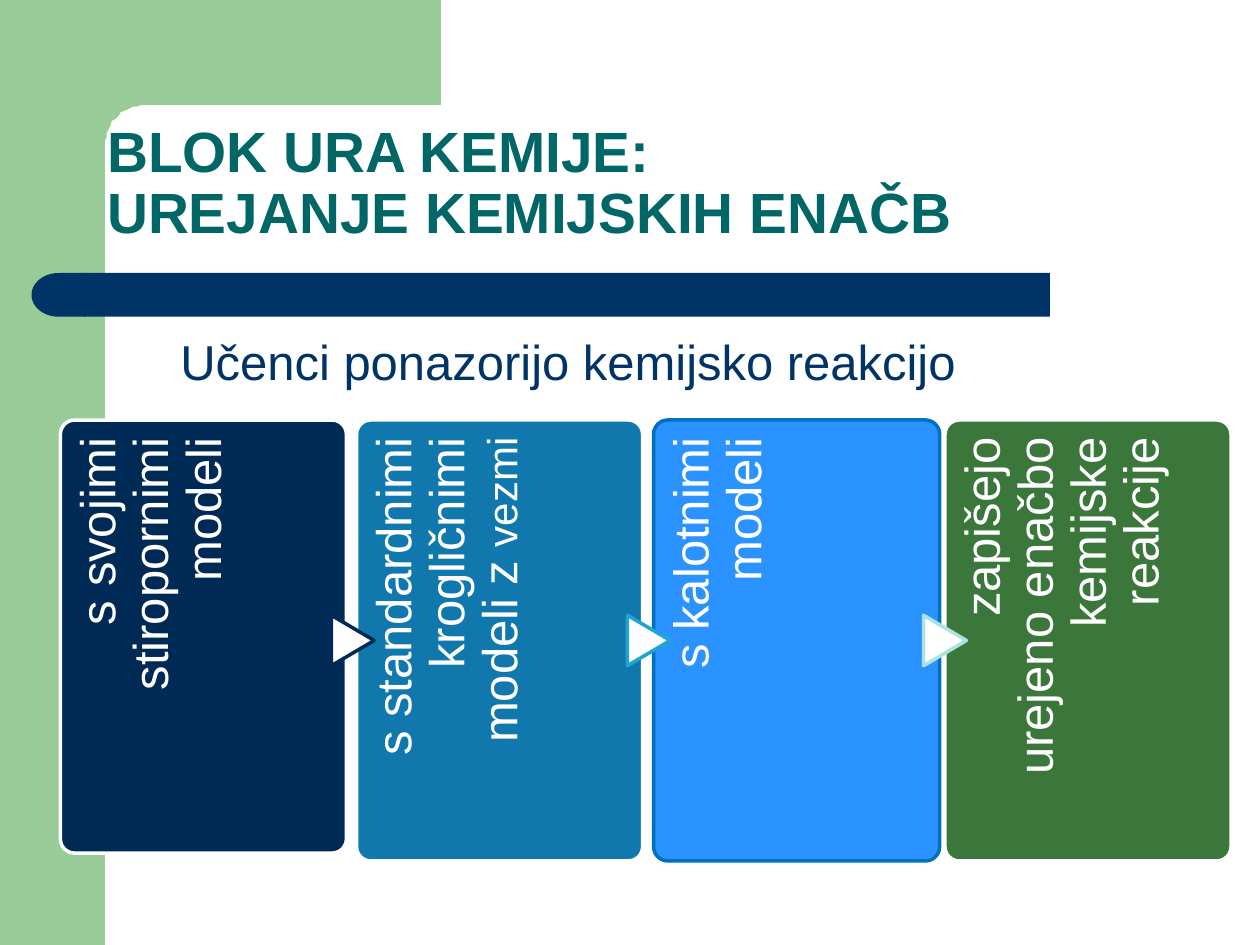
import math
from dataclasses import dataclass

import pptx
import pptx.dml.color
import pptx.enum.shapes
import pptx.enum.text
import pptx.util

Pt = pptx.util.Pt
SHAPE = pptx.enum.shapes.MSO_SHAPE
ALIGN = pptx.enum.text.PP_ALIGN
ANCHOR = pptx.enum.text.MSO_ANCHOR


@dataclass(frozen=True)
class Theme:
    font: str = "Arial"
    green: str = "99CC99"
    navy: str = "003366"
    teal: str = "006666"
    white: str = "FFFFFF"
    title_size: float = 32.4
    text_size: float = 28
    small_size: float = 24
    line_width: float = 2


THEME = Theme()

# Left, height, fill, outline, and text spans with their sizes
CARDS = [
    (34.5, 247.5, "002A56", "FFFFFF",
     [("s svojimi stiropornimi modeli", THEME.text_size)]),
    (203.75, 252, "1178AE", "FFFFFF",
     [("s standardnimi krogličnimi modeli z ", THEME.text_size),
      ("vezmi", THEME.small_size)]),
    (373.5, 252, "2B93FF", "0070C0",
     [("s kalotnimi modeli", THEME.text_size)]),
    (540, 252, "3B773B", "FFFFFF",
     [("zapišejo urejeno enačbo kemijske reakcije", THEME.text_size)]),
]
ARROW_LINES = ["002A56", "20A5D3", "ADE2E2"]


def color(value):
    return pptx.dml.color.RGBColor.from_string(value)


def paint(shape, fill, line=None):
    shape.shadow.inherit = False
    shape.fill.solid()
    shape.fill.fore_color.rgb = color(fill)
    if line:
        shape.line.color.rgb = color(line)
        shape.line.width = Pt(THEME.line_width)
    else:
        shape.line.fill.background()


def add_box(page, kind, box, fill, line=None):
    shape = page.shapes.add_shape(kind, *map(Pt, box))
    paint(shape, fill, line)
    return shape


def add_span(para, text, size, ink, bold=False):
    span = para.add_run()
    span.text = text
    span.font.name = THEME.font
    span.font.size = Pt(size)
    span.font.bold = bold
    span.font.color.rgb = color(ink)


def add_backdrop(page, box):
    left, top, width, height = box
    band, radius = 60, 23
    add_box(page, SHAPE.RECTANGLE, (left, top, band, height), THEME.green)

    # Top band with a rounded inner corner
    center = band + radius
    corner = [(left + center - radius * math.sin(math.radians(angle)),
               top + center - radius * math.cos(math.radians(angle)))
              for angle in range(0, 91, 6)]
    right, inner, bottom = left + 252, left + 36, top + 92
    points = [(right, top + band), *corner,
              (left + band, bottom), (inner, bottom), (inner, top)]
    builder = page.shapes.build_freeform(right, top, scale=Pt(1))
    builder.add_line_segments(points, close=True)
    paint(builder.convert_to_shape(), THEME.green)


def add_divider(page, box):
    left, top, width, height = box
    cap = 31
    add_box(page, SHAPE.RECTANGLE, (left + cap - 1, top, width - cap + 1, height), THEME.navy)
    end = add_box(page, SHAPE.FLOWCHART_DELAY, (left, top, cap, height), THEME.navy)
    end.rotation = 180


def add_title(page, box):
    title = page.shapes.title
    title.left, title.top, title.width, title.height = map(Pt, box)
    frame = title.text_frame
    frame.word_wrap = True
    frame.auto_size = pptx.enum.text.MSO_AUTO_SIZE.NONE
    frame.vertical_anchor = ANCHOR.BOTTOM
    para = frame.paragraphs[0]
    para.alignment = ALIGN.LEFT
    para.line_spacing = 0.9
    add_span(para, "BLOK URA KEMIJE: ", THEME.title_size, THEME.teal, True)
    para.add_line_break()
    add_span(para, "UREJANJE KEMIJSKIH ENAČB", THEME.title_size, THEME.teal, True)


def add_subtitle(page, box):
    frame = page.shapes.add_textbox(*map(Pt, box)).text_frame
    frame.word_wrap = True
    add_span(frame.paragraphs[0], "Učenci ponazorijo kemijsko reakcijo",
             THEME.text_size, THEME.navy)


def add_card(page, box, fill, line, spans):
    left, top, width, height = box
    card = add_box(page, SHAPE.ROUNDED_RECTANGLE, box, fill, line)
    card.adjustments[0] = 0.05

    # Upward text in a strip along the card's left side
    strip, length = width / 5, height * 0.82
    label = page.shapes.add_textbox(
        Pt(left + (strip - length) / 2), Pt(top + (length - strip) / 2),
        Pt(length), Pt(strip))
    label.rotation = 270
    frame = label.text_frame
    frame.word_wrap = True
    frame.vertical_anchor = ANCHOR.TOP
    frame.margin_left = frame.margin_bottom = 0
    frame.margin_top, frame.margin_right = Pt(7.2), Pt(10)
    para = frame.paragraphs[0]
    para.alignment = ALIGN.RIGHT
    para.line_spacing = 0.9
    for text, size in spans:
        add_span(para, text, size, THEME.white)


def add_process(page, box):
    left, top, width, height = box
    card_width = 163.5
    for index, (offset, card_height, fill, line, spans) in enumerate(CARDS):
        add_card(page, (left + offset, top, card_width, card_height), fill, line, spans)
        if index:
            arrow_left = left + 187.2 + 169.2 * (index - 1)
            arrow = add_box(page, SHAPE.FLOWCHART_EXTRACT,
                            (arrow_left, top + 113.75, 28.8, 24.5),
                            THEME.white, ARROW_LINES[index - 1])
            arrow.rotation = 90


def main():
    deck = pptx.Presentation()
    deck.slide_width, deck.slide_height = Pt(720), Pt(540)
    page = deck.slides.add_slide(deck.slide_layouts[5])
    add_backdrop(page, (0, 0, 720, 540))
    add_divider(page, (18, 156, 582, 25))
    add_title(page, (54, 54, 624, 90))
    add_process(page, (0, 240, 720, 252))
    add_subtitle(page, (96, 186, 546, 41))
    deck.save("out.pptx")


if __name__ == "__main__":
    main()
